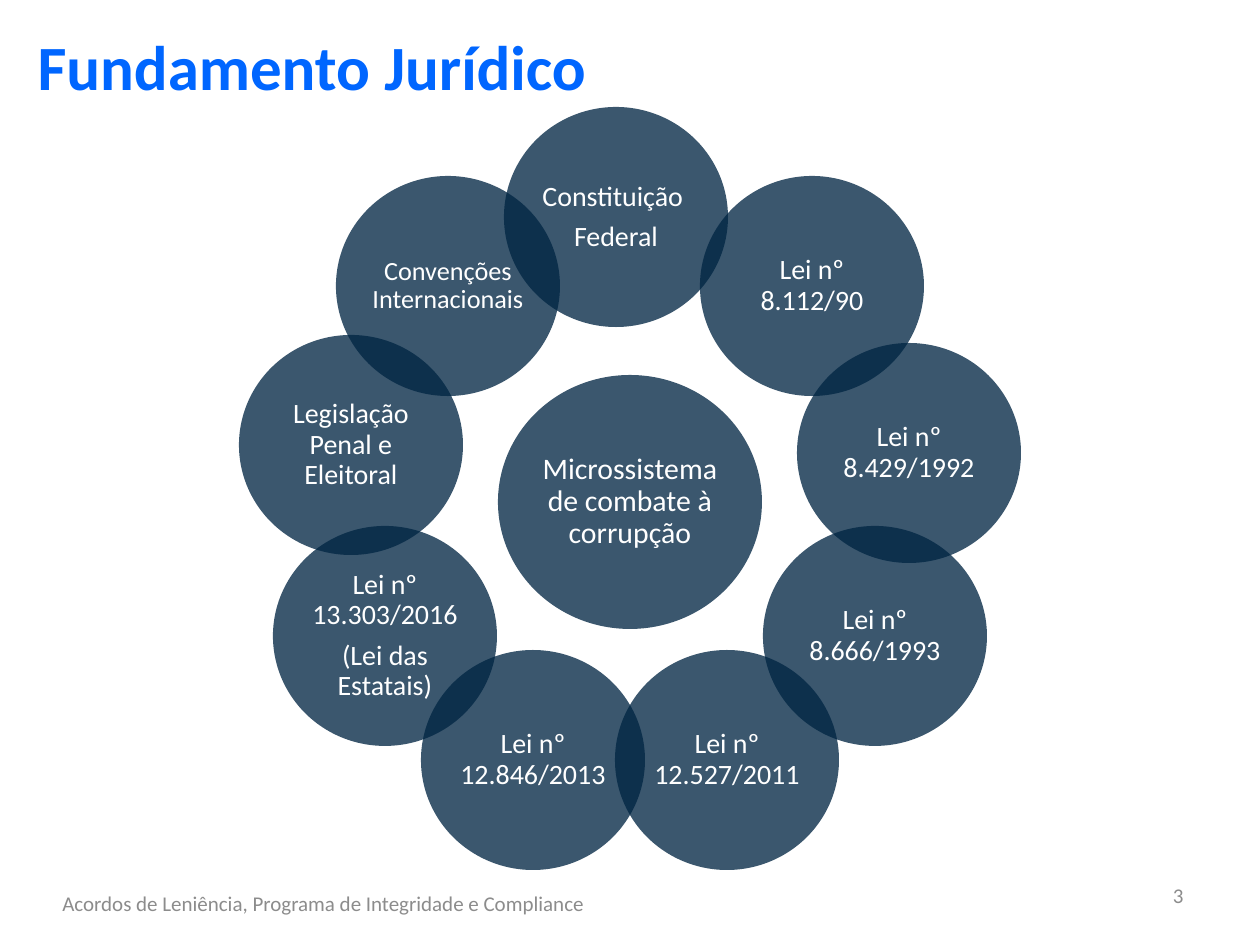
from pptx import Presentation
from pptx import util as u
from pptx.dml.color import RGBColor
from pptx.enum import shapes, text
from pptx.oxml.ns import qn
from lxml import etree

PX = 914400 / 126
FONT = "Calibri"
NAVY, WHITE, BLUE, GRAY = "002543", "FFFFFF", "0066FF", "8C8C8C"
OPACITY = 77000
RING_SIZE = (224, 220)

# left, top, text size, paragraphs
LAWS = [
    (504, 107, 16, ["Constituição ", "Federal"]),
    (700, 176, 16, ["Lei nº 8.112/90"]),
    (797, 343, 16, ["Lei nº 8.429/1992"]),
    (763, 526, 16, ["Lei nº 8.666/1993"]),
    (615, 650, 16, ["Lei nº 12.527/2011"]),
    (421, 650, 16, ["Lei nº 12.846/2013"]),
    (273, 526, 16, ["Lei nº 13.303/2016", "(Lei das Estatais)"]),
    (239, 335, 16, ["Legislação Penal e Eleitoral"]),
    (336, 176, 15, ["Convenções Internacionais"]),
]


def px(*lengths):
    return [u.Emu(round(length * PX)) for length in lengths]


def rgb(color):
    return RGBColor.from_string(color)


def write(paragraph, words, size, color, align, bold=False):
    paragraph.alignment = align
    run = paragraph.add_run()
    run.text = words
    run.font.name = FONT
    run.font.size = u.Pt(size)
    run.font.bold = bold
    run.font.color.rgb = rgb(color)


def add_circle(slide, left, top, size, font_size, paragraphs):
    """Add a translucent circle with its label; overlaps show darker."""
    circle = slide.shapes.add_shape(
        shapes.MSO_SHAPE.OVAL, *px(left, top, *size))
    circle.shadow.inherit = False
    circle.line.fill.background()
    circle.fill.solid()
    circle.fill.fore_color.rgb = rgb(NAVY)
    color = circle._element.spPr.find(qn("a:solidFill"))[0]
    etree.SubElement(color, qn("a:alpha"), val=str(OPACITY))

    frame = circle.text_frame
    frame.word_wrap = True
    frame.vertical_anchor = text.MSO_ANCHOR.MIDDLE
    frame.margin_left = frame.margin_right = u.Inches(0.02)
    frame.margin_top = frame.margin_bottom = u.Inches(0.02)
    for index, words in enumerate(paragraphs):
        paragraph = frame.add_paragraph() if index else frame.paragraphs[0]
        paragraph.line_spacing = 0.9
        paragraph.space_after = u.Pt(round(font_size * 0.35, 1))
        write(paragraph, words, font_size, WHITE, text.PP_ALIGN.CENTER)


def set_title(slide, words):
    title = slide.shapes.title
    title.left, title.top, title.width, title.height = px(25, 21, 582, 84)
    frame = title.text_frame
    frame.word_wrap = True
    frame.vertical_anchor = text.MSO_ANCHOR.TOP
    write(frame.paragraphs[0], words, 36, BLUE, text.PP_ALIGN.LEFT, bold=True)


def add_footer(slide, left, top, width, words, align):
    footer = slide.shapes.add_textbox(*px(left, top, width, 50))
    frame = footer.text_frame
    frame.word_wrap = True
    frame.vertical_anchor = text.MSO_ANCHOR.MIDDLE
    write(frame.paragraphs[0], words, 12, GRAY, align)


def main():
    deck = Presentation()
    deck.slide_width, deck.slide_height = px(1260, 945)
    slide = deck.slides.add_slide(deck.slide_layouts.get_by_name("Title Only"))

    set_title(slide, "Fundamento Jurídico")
    add_circle(slide, 498, 375, (264, 254), 17,
               ["Microssistema de combate à corrupção"])
    for left, top, font_size, paragraphs in LAWS:
        add_circle(slide, left, top, RING_SIZE, font_size, paragraphs)

    add_footer(slide, 958, 870, 238, "3", text.PP_ALIGN.RIGHT)
    add_footer(slide, 40, 878, 567,
               "Acordos de Leniência, Programa de Integridade e Compliance",
               text.PP_ALIGN.CENTER)
    deck.save("out.pptx")


if __name__ == "__main__":
    main()
